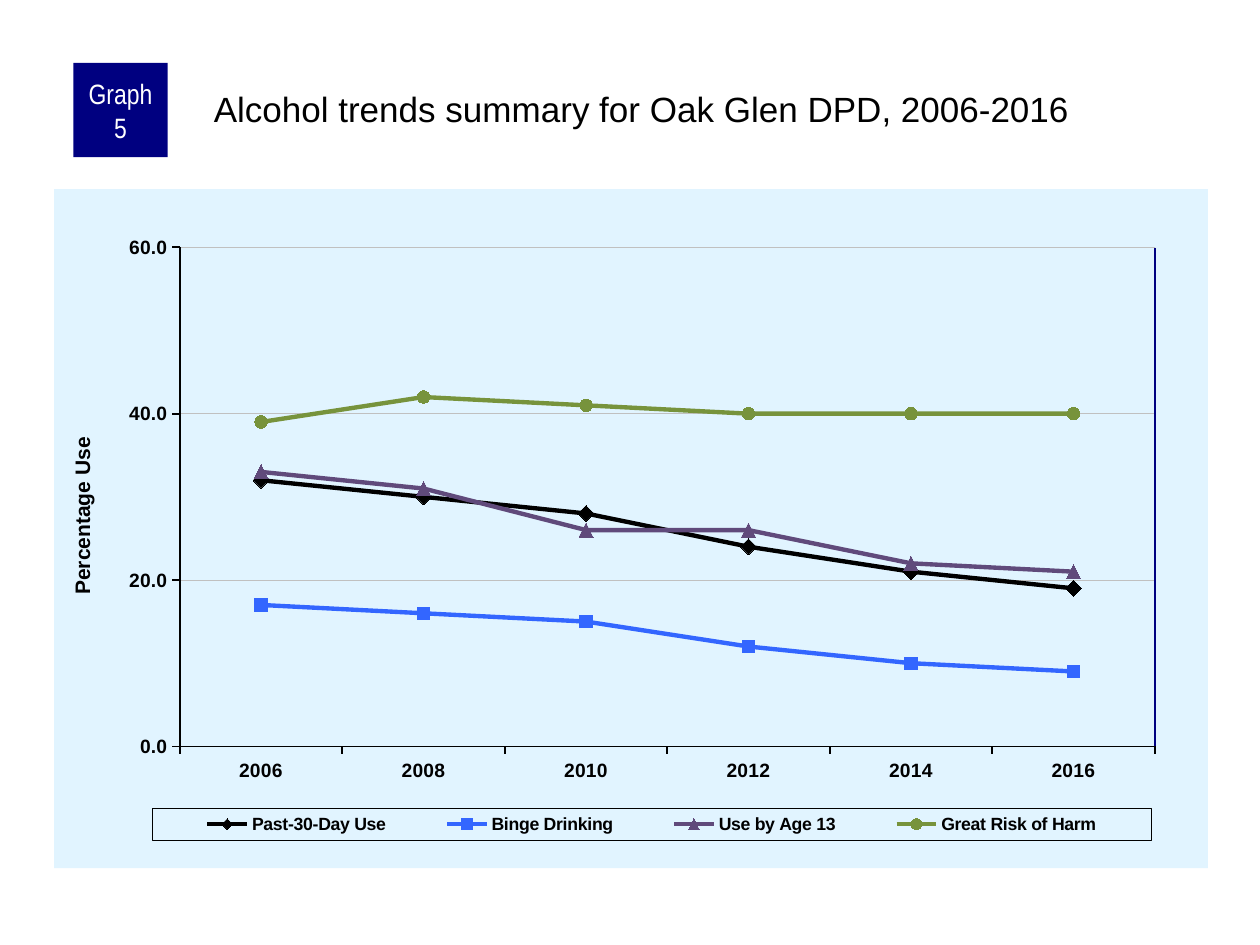
"""Builds a slide with a line chart of alcohol trends, 2006-2016."""
from dataclasses import dataclass

from lxml.etree import SubElement
from pptx import Presentation
from pptx.chart.data import CategoryChartData
from pptx.dml.color import RGBColor
from pptx.enum.chart import XL_CHART_TYPE as ChartType
from pptx.enum.chart import XL_LEGEND_POSITION as LegendPos
from pptx.enum.chart import XL_MARKER_STYLE as Marker
from pptx.enum.chart import XL_TICK_MARK as Tick
from pptx.enum.shapes import MSO_CONNECTOR as Connector
from pptx.enum.shapes import MSO_SHAPE as Shape
from pptx.enum.text import MSO_ANCHOR as Anchor
from pptx.enum.text import PP_ALIGN as Align
from pptx.oxml import parse_xml
from pptx.oxml.ns import nsdecls, qn
from pptx.util import Cm, Pt


@dataclass(frozen=True)
class Theme:
    font: str = "Arial"
    narrow: str = "Arial Narrow"
    ink: str = "000000"
    navy: str = "000080"
    white: str = "FFFFFF"
    panel: str = "E1F4FF"
    grid: str = "C0C0C0"
    past_month: str = "000000"
    binge: str = "3366FF"
    early_use: str = "604A7B"
    risk: str = "77933C"
    title: float = 20
    badge: float = 16
    axis_title: float = 12
    axis: float = 11
    legend: float = 10.1
    chart: float = 8
    trend: float = 2.5
    axis_line: float = 1
    hairline: float = 0.25


T = Theme()
YEARS = ["2006", "2008", "2010", "2012", "2014", "2016"]
TRENDS = [
    ("Past-30-Day Use", [32, 30, 28, 24, 21, 19], T.past_month, Marker.DIAMOND, 9),
    ("Binge Drinking", [17, 16, 15, 12, 10, 9], T.binge, Marker.SQUARE, 7),
    ("Use by Age 13", [33, 31, 26, 26, 22, 21], T.early_use, Marker.TRIANGLE, 8),
    ("Great Risk of Harm", [39, 42, 41, 40, 40, 40], T.risk, Marker.CIRCLE, 7),
]


def rgb(color):
    return RGBColor.from_string(color)


def set_font(font, size, color=T.ink, name=T.font, bold=False):
    font.size, font.name, font.bold = Pt(size), name, bold
    font.color.rgb = rgb(color)


def set_fill(fill, color):
    fill.solid()
    fill.fore_color.rgb = rgb(color)


def set_line(line, color, width):
    line.color.rgb = rgb(color)
    line.width = Pt(width)


def add_run(tf, text, size, color, name, margins):
    tf.word_wrap = True
    tf.margin_left, tf.margin_top, tf.margin_right, tf.margin_bottom = map(Cm, margins)
    p = tf.paragraphs[0]
    r = p.add_run()
    r.text = text
    set_font(r.font, size, color, name)
    return p


def add_badge(s, text):
    sp = s.shapes.add_shape(Shape.RECTANGLE, Cm(1.48), Cm(1.27), Cm(1.9), Cm(1.9))
    sp.shadow.inherit = False
    set_fill(sp.fill, T.navy)
    sp.line.fill.background()
    tf = sp.text_frame
    tf.vertical_anchor = Anchor.MIDDLE
    p = add_run(tf, text, T.badge, T.white, T.narrow, (0.13, 0, 0.13, 0))
    p.alignment = Align.CENTER


def add_title(s, text):
    sp = s.shapes.add_textbox(Cm(4.23), Cm(1.69), Cm(20.11), Cm(2.12))
    add_run(sp.text_frame, text, T.title, T.ink, T.font, (0.08, 0.08, 0, 0))


def place(element, index, inner=False, **box):
    for old in element.findall(qn("c:layout")):
        element.remove(old)
    layout = parse_xml(f"<c:layout {nsdecls('c')}/>")
    manual = SubElement(layout, qn("c:manualLayout"))
    if inner:
        SubElement(manual, qn("c:layoutTarget")).set("val", "inner")
    for key in "xy":
        SubElement(manual, qn(f"c:{key}Mode")).set("val", "edge")
    for key, value in box.items():
        SubElement(manual, qn(f"c:{key}")).set("val", str(value))
    element.insert(index, layout)


def add_frame(element, fill, line):
    def paint(color):
        return f'<a:solidFill><a:srgbClr val="{color}"/></a:solidFill>' if color else "<a:noFill/>"

    frame = parse_xml(f"<c:spPr {nsdecls('c', 'a')}>{paint(fill)}"
                      f'<a:ln w="{Pt(T.hairline)}">{paint(line)}</a:ln></c:spPr>')
    element.find(qn("c:txPr")).addprevious(frame)


def style_axis(axis):
    axis.major_tick_mark, axis.minor_tick_mark = Tick.OUTSIDE, Tick.NONE
    set_font(axis.tick_labels.font, T.axis, bold=True)
    set_line(axis.format.line, T.ink, T.axis_line)


def style_value_axis(axis, title):
    style_axis(axis)
    axis.minimum_scale, axis.maximum_scale, axis.major_unit = 0, 60, 20
    axis.tick_labels.number_format = "0.0"
    axis.tick_labels.number_format_is_linked = False
    axis.has_major_gridlines = True
    set_line(axis.major_gridlines.format.line, T.grid, T.hairline)
    r = axis.axis_title.text_frame.paragraphs[0].add_run()
    r.text = title
    set_font(r.font, T.axis_title, bold=True)
    place(axis.axis_title._element, 1, x=0.01, y=0.36)


def style_series(series, color, marker, size):
    series.smooth = False
    set_line(series.format.line, color, T.trend)
    series.marker.style, series.marker.size = marker, size
    set_fill(series.marker.format.fill, color)
    set_line(series.marker.format.line, color, T.hairline)


def style_legend(chart):
    chart.has_legend = True
    legend = chart.legend
    legend.position, legend.include_in_layout = LegendPos.BOTTOM, False
    set_font(legend.font, T.legend, bold=True)
    add_frame(legend._element, None, T.ink)
    place(legend._element, 1, x=0.085, y=0.912, w=0.866, h=0.047)


def add_trend_chart(s):
    data = CategoryChartData(number_format="0.0")
    data.categories = YEARS
    for name, values, *_ in TRENDS:
        data.add_series(name, values)
    chart = s.shapes.add_chart(ChartType.LINE_MARKERS, Cm(1.09), Cm(3.81),
                               Cm(23.26), Cm(13.69), data).chart
    chart.has_title = False
    set_font(chart.font, T.chart)
    add_frame(chart._chartSpace, T.panel, None)
    place(chart._chartSpace.chart.plotArea, 0, True, x=0.109, y=0.086, w=0.845, h=0.735)
    chart.plots[0].vary_by_categories = False
    style_axis(chart.category_axis)
    style_value_axis(chart.value_axis, "Percentage Use")
    for series, (_, _, *look) in zip(chart.plots[0].series, TRENDS):
        style_series(series, *look)
    style_legend(chart)


def add_right_edge(s):
    x = Cm(23.28)
    line = s.shapes.add_connector(Connector.STRAIGHT, x, Cm(4.99), x, Cm(15.04))
    set_line(line.line, T.navy, T.axis_line)
    SubElement(line._element.spPr, qn("a:effectLst"))


def main():
    prs = Presentation()
    prs.slide_width, prs.slide_height = Cm(25.4), Cm(19.05)
    s = prs.slides.add_slide(prs.slide_layouts[6])
    add_badge(s, "Graph 5")
    add_title(s, "Alcohol trends summary for Oak Glen DPD, 2006-2016")
    add_trend_chart(s)
    add_right_edge(s)
    prs.save("out.pptx")


if __name__ == "__main__":
    main()
